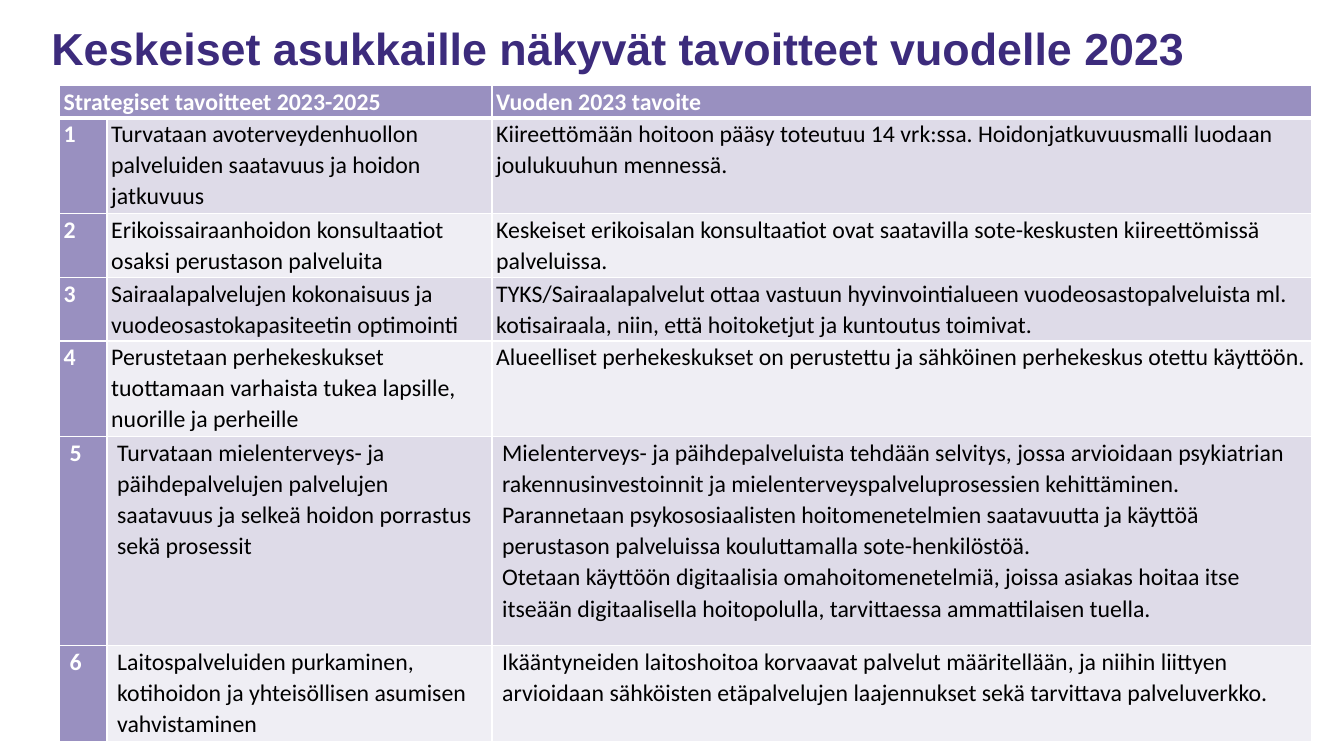
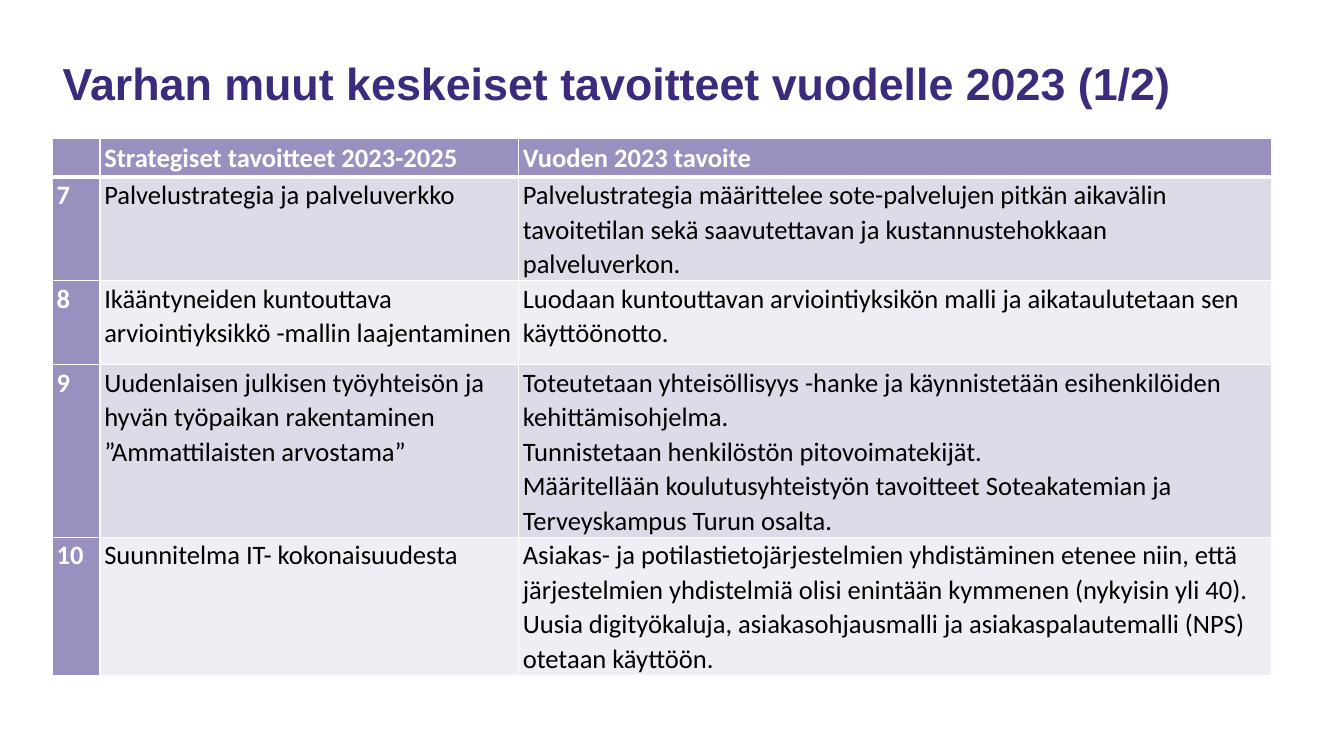
import pptx
import pptx.dml.color
import pptx.enum.text
import pptx.oxml
import pptx.oxml.ns
import pptx.util

Pt = pptx.util.Pt

COLOURS = {
    "title": "3C2B7C",
    "header": "9990C0",
    "odd": "DEDBE8",
    "even": "EFEEF4",
    "body": "000000",
    "white": "FFFFFF",
}
GOALS_HEADING = "Strategiset tavoitteet 2023-2025"
TARGET_HEADING = "Vuoden 2023 tavoite"
NARROW_INSET = 3
WIDE_INSET = 7.2

RESIDENT_GOALS = [
    ("1", ["Turvataan avoterveydenhuollon palveluiden saatavuus ja hoidon jatkuvuus"],
     ["Kiireettömään hoitoon pääsy toteutuu 14 vrk:ssa. Hoidonjatkuvuusmalli luodaan "
      "joulukuuhun mennessä."]),
    ("2", ["Erikoissairaanhoidon konsultaatiot osaksi perustason palveluita"],
     ["Keskeiset erikoisalan konsultaatiot ovat saatavilla sote-keskusten kiireettömissä "
      "palveluissa."]),
    ("3", ["Sairaalapalvelujen kokonaisuus ja vuodeosastokapasiteetin optimointi"],
     ["TYKS/Sairaalapalvelut ottaa vastuun hyvinvointialueen vuodeosastopalveluista ml. "
      "kotisairaala, niin, että hoitoketjut ja kuntoutus toimivat."]),
    ("4", ["Perustetaan perhekeskukset tuottamaan varhaista tukea lapsille, nuorille ja "
           "perheille"],
     ["Alueelliset perhekeskukset on perustettu ja sähköinen perhekeskus otettu käyttöön."]),
    ("5", ["Turvataan mielenterveys- ja päihdepalvelujen palvelujen saatavuus ja selkeä "
           "hoidon porrastus sekä prosessit"],
     ["Mielenterveys- ja päihdepalveluista tehdään selvitys, jossa arvioidaan psykiatrian "
      "rakennusinvestoinnit ja mielenterveyspalveluprosessien kehittäminen. Parannetaan "
      "psykososiaalisten hoitomenetelmien saatavuutta ja käyttöä perustason palveluissa "
      "kouluttamalla sote-henkilöstöä.",
      "Otetaan käyttöön digitaalisia omahoitomenetelmiä, joissa asiakas hoitaa itse itseään "
      "digitaalisella hoitopolulla, tarvittaessa ammattilaisen tuella."]),
    ("6", ["Laitospalveluiden purkaminen, kotihoidon ja yhteisöllisen asumisen vahvistaminen"],
     ["Ikääntyneiden laitoshoitoa korvaavat palvelut määritellään, ja niihin liittyen "
      "arvioidaan sähköisten etäpalvelujen laajennukset sekä tarvittava palveluverkko."]),
]

OTHER_GOALS = [
    ("7", ["Palvelustrategia ja palveluverkko"],
     ["Palvelustrategia määrittelee sote-palvelujen pitkän aikavälin tavoitetilan sekä "
      "saavutettavan ja kustannustehokkaan palveluverkon."]),
    ("8", ["Ikääntyneiden kuntouttava arviointiyksikkö -mallin laajentaminen"],
     ["Luodaan kuntouttavan arviointiyksikön malli ja aikataulutetaan sen käyttöönotto."]),
    ("9", ["Uudenlaisen julkisen työyhteisön ja", "hyvän työpaikan rakentaminen",
           "”Ammattilaisten arvostama”"],
     ["Toteutetaan yhteisöllisyys -hanke ja käynnistetään esihenkilöiden kehittämisohjelma.",
      "Tunnistetaan henkilöstön pitovoimatekijät.",
      "Määritellään koulutusyhteistyön tavoitteet Soteakatemian ja Terveyskampus Turun "
      "osalta."]),
    ("10", ["Suunnitelma IT- kokonaisuudesta"],
     ["Asiakas- ja potilastietojärjestelmien yhdistäminen etenee niin, että järjestelmien "
      "yhdistelmiä olisi enintään kymmenen (nykyisin yli 40).",
      "Uusia digityökaluja, asiakasohjausmalli ja asiakaspalautemalli (NPS) otetaan "
      "käyttöön."]),
]


def rgb(name):
    return pptx.dml.color.RGBColor.from_string(COLOURS[name])


def add_text(paragraph, text, font_name, size, colour, bold):
    run = paragraph.add_run()
    run.text = text
    run.font.name = font_name
    run.font.size = Pt(size)
    run.font.bold = bold
    run.font.color.rgb = rgb(colour)


def place_title(slide, text, box):
    title = slide.shapes.title
    title.left, title.top, title.width, title.height = map(Pt, box)
    frame = title.text_frame
    frame.word_wrap = True
    frame.auto_size = pptx.enum.text.MSO_AUTO_SIZE.NONE
    frame.vertical_anchor = pptx.enum.text.MSO_ANCHOR.MIDDLE
    heading = frame.paragraphs[0]
    heading.alignment = pptx.enum.text.PP_ALIGN.LEFT
    add_text(heading, text, "Arial", 32, "title", True)


def set_borders(cell, bottom_width):
    properties = cell._tc.get_or_add_tcPr()
    widths = {"lnL": 1, "lnR": 1, "lnT": 1, "lnB": bottom_width}
    for position, (side, width) in enumerate(widths.items()):
        border = pptx.oxml.parse_xml(
            f'<a:{side} {pptx.oxml.ns.nsdecls("a")} w="{Pt(width)}"><a:solidFill>'
            f'<a:srgbClr val="{COLOURS["white"]}"/></a:solidFill></a:{side}>')
        properties.insert(position, border)


def fill_cell(cell, lines, size, fill, strong, header=False, inset=NARROW_INSET):
    cell.fill.solid()
    cell.fill.fore_color.rgb = rgb(fill)
    set_borders(cell, 3 if header else 1)
    cell.margin_left = cell.margin_right = Pt(inset)
    cell.margin_top = cell.margin_bottom = 0
    anchors = pptx.enum.text.MSO_ANCHOR
    cell.vertical_anchor = anchors.MIDDLE if header else anchors.TOP
    frame = cell.text_frame
    for index, line in enumerate(lines):
        paragraph = frame.add_paragraph() if index else frame.paragraphs[0]
        paragraph.line_spacing = 1.07
        add_text(paragraph, line, "Calibri", size, "white" if strong else "body", strong)


def place_goals(slide, origin, columns, heights, headings, goals, size, wide_rows=()):
    left, top = origin
    table = slide.shapes.add_table(
        len(heights), len(columns), Pt(left), Pt(top),
        Pt(sum(columns)), Pt(sum(heights))).table
    for column, width in zip(table.columns, columns):
        column.width = Pt(width)
    for row, height in zip(table.rows, heights):
        row.height = Pt(height)
    for column, heading in enumerate(headings):
        fill_cell(table.cell(0, column), [heading] if heading else [], size,
                  "header", True, header=True)
    for row, (number, goal, target) in enumerate(goals, 1):
        inset = WIDE_INSET if number in wide_rows else NARROW_INSET
        band = "odd" if row % 2 else "even"
        fill_cell(table.cell(row, 0), [number], size, "header", True, inset=inset)
        for column, lines in enumerate((goal, target), 1):
            fill_cell(table.cell(row, column), lines, size, band, False, inset=inset)
    return table


def add_goal_slide(deck, title, title_box, **goals):
    slide = deck.slides.add_slide(deck.slide_layouts[5])
    place_title(slide, title, title_box)
    return place_goals(slide, **goals)


def main():
    deck = pptx.Presentation()
    deck.slide_width, deck.slide_height = Pt(960), Pt(540)

    resident_table = add_goal_slide(
        deck, "Keskeiset asukkaille näkyvät tavoitteet vuodelle 2023",
        (29.5, 27.4, 903, 13), origin=(42.5, 61.2), columns=(34, 275, 585.5),
        heights=(23, 68.4, 45.5, 45.5, 68.4, 149, 68.4),
        headings=(GOALS_HEADING, "", TARGET_HEADING),
        goals=RESIDENT_GOALS, size=17, wide_rows=("5", "6"))
    resident_table.cell(0, 0).merge(resident_table.cell(0, 1))

    add_goal_slide(
        deck, "Varhan muut keskeiset tavoitteet vuodelle 2023 (1/2)",
        (37.5, 41.8, 903, 34.6), origin=(37.5, 98.6), columns=(34, 299, 538),
        heights=(28, 74, 60, 123, 98),
        headings=("", GOALS_HEADING, TARGET_HEADING),
        goals=OTHER_GOALS, size=19)

    deck.save("out.pptx")


if __name__ == "__main__":
    main()
